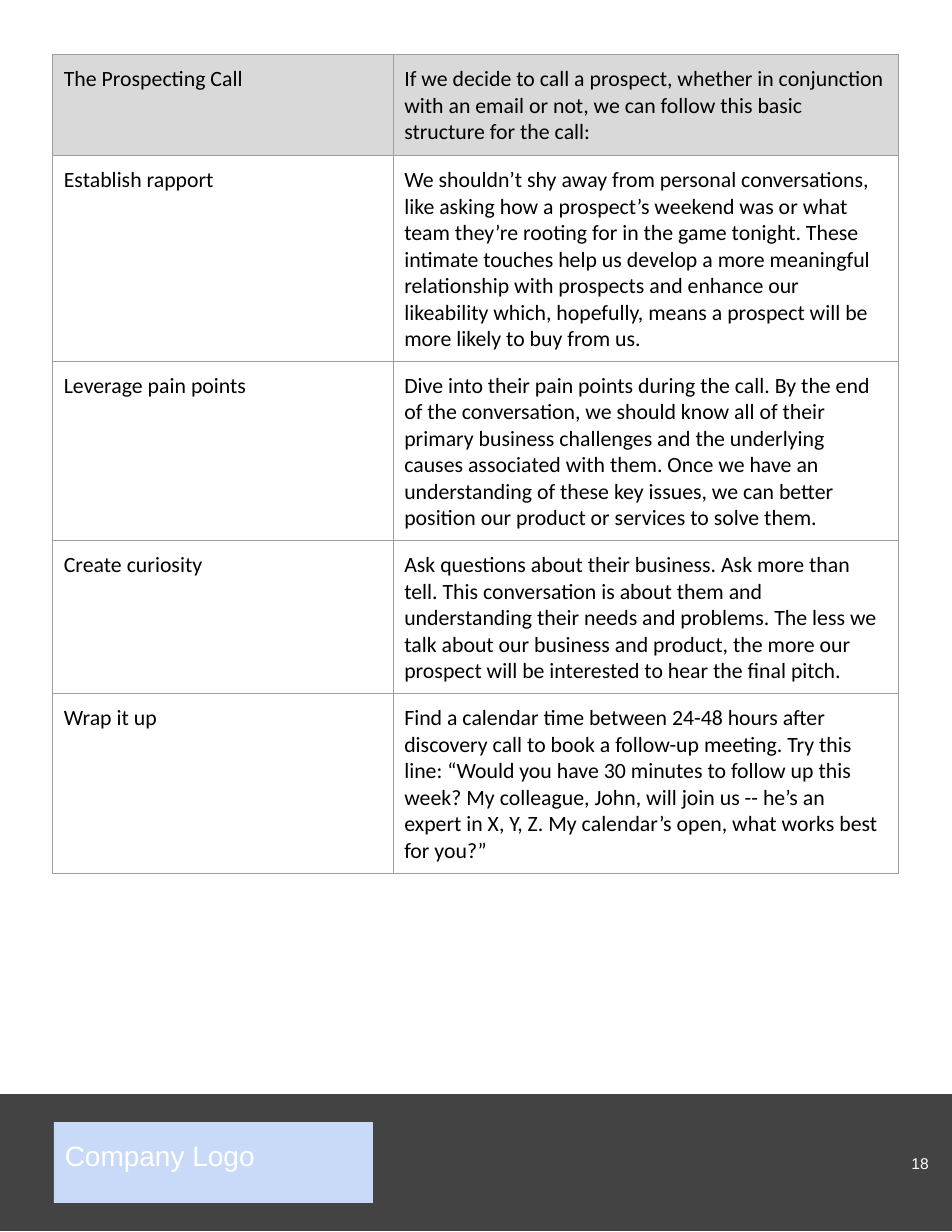
from lxml.etree import SubElement
from pptx import Presentation
from pptx.dml.color import RGBColor
from pptx.enum.shapes import MSO_SHAPE
from pptx.enum.text import MSO_ANCHOR, PP_ALIGN
from pptx.oxml.ns import qn
from pptx.util import Inches, Pt

COLORS = {
    "footer": "434343",
    "logo": "C9DAF8",
    "header": "D9D9D9",
    "border": "9E9E9E",
    "dark_text": "000000",
    "light_text": "FFFFFF",
}
INSET = Inches(0.1)
COLUMN_WIDTHS = (3.04, 4.51)
ROW_HEIGHT = 0.43
CALL_STEPS = [
    ("The Prospecting Call",
     "If we decide to call a prospect, whether in conjunction with an email or not, "
     "we can follow this basic structure for the call:"),
    ("Establish rapport",
     "We shouldn’t shy away from personal conversations, like asking how a prospect’s "
     "weekend was or what team they’re rooting for in the game tonight. These intimate "
     "touches help us develop a more meaningful relationship with prospects and enhance "
     "our likeability which, hopefully, means a prospect will be more likely to buy from us."),
    ("Leverage pain points",
     "Dive into their pain points during the call. By the end of the conversation, we "
     "should know all of their primary business challenges and the underlying causes "
     "associated with them. Once we have an understanding of these key issues, we can "
     "better position our product or services to solve them."),
    ("Create curiosity",
     "Ask questions about their business. Ask more than tell. This conversation is about "
     "them and understanding their needs and problems. The less we talk about our business "
     "and product, the more our prospect will be interested to hear the final pitch."),
    ("Wrap it up",
     "Find a calendar time between 24-48 hours after discovery call to book a follow-up "
     "meeting. Try this line: “Would you have 30 minutes to follow up this week? My "
     "colleague, John, will join us -- he’s an expert in X, Y, Z. My calendar’s open, "
     "what works best for you?”"),
]


def rgb(name):
    return RGBColor.from_string(COLORS[name])


def set_insets(target):
    """Give a cell or text frame the same margin on every side."""
    for side in ("left", "top", "right", "bottom"):
        setattr(target, f"margin_{side}", INSET)


def write_text(text_frame, text, font, size, color, align=PP_ALIGN.LEFT):
    text_frame.word_wrap = True
    paragraph = text_frame.paragraphs[0]
    paragraph.alignment = align
    run = paragraph.add_run()
    run.text = text
    run.font.name = font
    run.font.size = Pt(size)
    run.font.color.rgb = rgb(color)
    return paragraph


def add_rectangle(slide, left, top, width, height, color):
    shape = slide.shapes.add_shape(
        MSO_SHAPE.RECTANGLE, Inches(left), Inches(top), Inches(width), Inches(height))
    shape.shadow.inherit = False
    shape.fill.solid()
    shape.fill.fore_color.rgb = rgb(color)
    shape.line.fill.background()
    return shape


def add_logo_box(slide):
    text_frame = add_rectangle(slide, 0.48, 10.02, 2.85, 0.72, "logo").text_frame
    set_insets(text_frame)
    text_frame.vertical_anchor = MSO_ANCHOR.TOP
    paragraph = write_text(text_frame, "Company Logo", "Arial", 18, "light_text")
    paragraph.line_spacing = 1.15
    paragraph.space_after = Pt(16)


def add_page_number(slide, number):
    box = slide.shapes.add_textbox(Inches(7.88), Inches(9.97), Inches(0.51), Inches(0.84))
    set_insets(box.text_frame)
    box.text_frame.vertical_anchor = MSO_ANCHOR.MIDDLE
    write_text(box.text_frame, number, "Arial", 10, "light_text", PP_ALIGN.RIGHT)


def set_borders(cell):
    properties = cell._tc.get_or_add_tcPr()
    for index, tag in enumerate(("a:lnL", "a:lnR", "a:lnT", "a:lnB")):
        line = SubElement(properties, qn(tag), w=str(Pt(0.75)))
        fill = SubElement(line, qn("a:solidFill"))
        SubElement(fill, qn("a:srgbClr"), val=COLORS["border"])
        properties.insert(index, line)


def add_call_table(slide):
    table = slide.shapes.add_table(
        len(CALL_STEPS), len(COLUMN_WIDTHS), Inches(0.47), Inches(0.49),
        Inches(sum(COLUMN_WIDTHS)), Inches(ROW_HEIGHT * len(CALL_STEPS))).table
    table.horz_banding = False
    table.first_row = False
    for column, width in zip(table.columns, COLUMN_WIDTHS):
        column.width = Inches(width)
    for row_index, texts in enumerate(CALL_STEPS):
        for column_index, text in enumerate(texts):
            cell = table.cell(row_index, column_index)
            set_insets(cell)
            write_text(cell.text_frame, text, "Calibri", 14, "dark_text")
            if row_index == 0:
                cell.fill.solid()
                cell.fill.fore_color.rgb = rgb("header")
            else:
                cell.fill.background()
            set_borders(cell)


def main():
    presentation = Presentation()
    presentation.slide_width = Inches(8.5)
    presentation.slide_height = Inches(11)
    slide = presentation.slides.add_slide(presentation.slide_layouts[6])
    add_rectangle(slide, 0, 9.77, 8.5, 1.22, "footer")
    add_page_number(slide, "18")
    add_call_table(slide)
    add_logo_box(slide)
    presentation.save("out.pptx")


if __name__ == "__main__":
    main()
